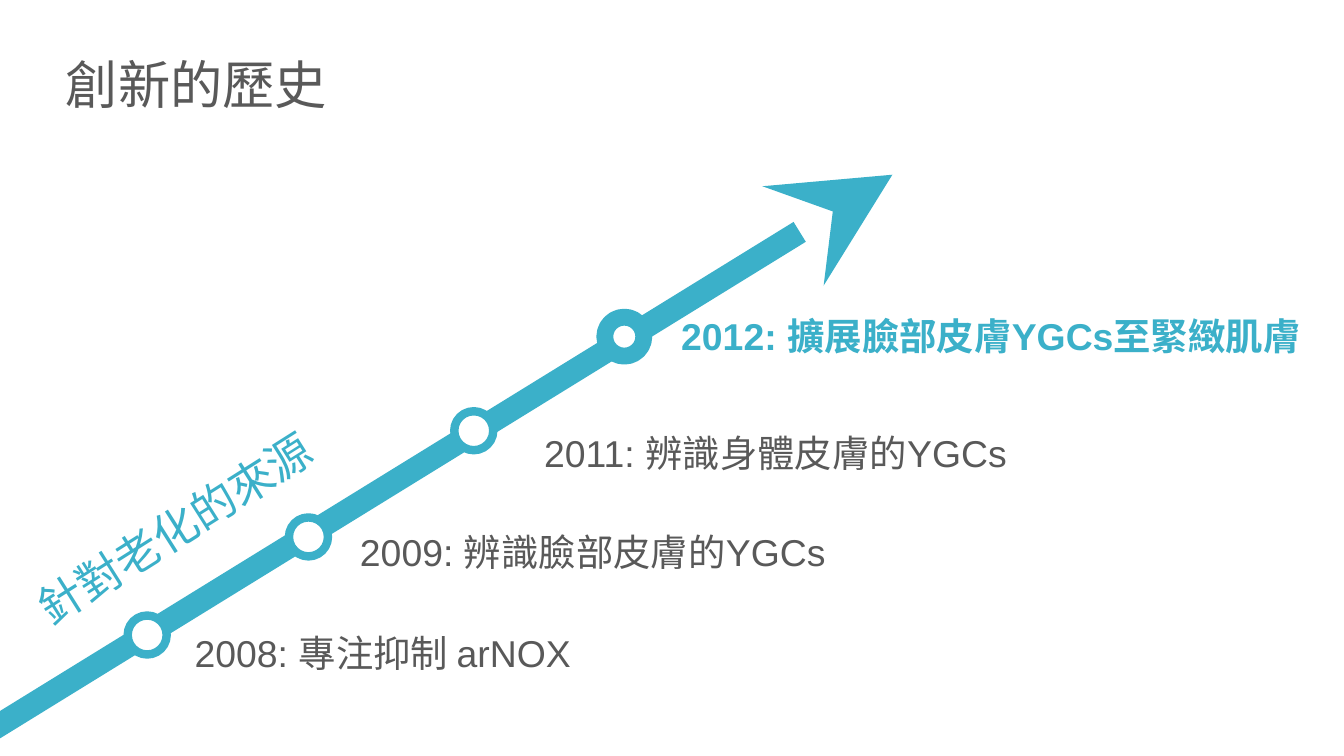
from lxml import etree
from pptx import Presentation
from pptx.dml.color import RGBColor
from pptx.enum.shapes import MSO_CONNECTOR, MSO_SHAPE
from pptx.enum.text import MSO_ANCHOR, MSO_AUTO_SIZE, PP_ALIGN
from pptx.oxml.ns import qn
from pptx.util import Inches, Pt

COLORS = {"teal": "3BB0C9", "gray": "595959", "white": "FFFFFF"}


def color(name):
    return RGBColor.from_string(COLORS[name])


def write(shape, text, size, name, bold=False, anchor=MSO_ANCHOR.TOP):
    tf = shape.text_frame
    frame = {"word_wrap": True, "auto_size": MSO_AUTO_SIZE.NONE,
             "vertical_anchor": anchor}
    for key, value in frame.items():
        setattr(tf, key, value)
    p = tf.paragraphs[0]
    p.alignment = PP_ALIGN.LEFT
    r = p.add_run()
    r.text = text
    for key, value in {"name": "Arial", "size": Pt(size), "bold": bold}.items():
        setattr(r.font, key, value)
    r.font.color.rgb = color(name)


# Widescreen 16:9 slide
prs = Presentation()
prs.slide_width, prs.slide_height = Inches(10), Inches(10 * 9 / 16)
s = prs.slides.add_slide(prs.slide_layouts[5])

# Title
title = s.shapes.title
box = {"left": 0.39, "top": 0.34, "width": 5.84, "height": 0.57}
for key, value in box.items():
    setattr(title, key, Inches(value))
write(title, "創新的歷史", 28, "gray", anchor=MSO_ANCHOR.MIDDLE)

# Rising arrow
arrow = s.shapes.add_connector(MSO_CONNECTOR.STRAIGHT, Inches(-0.11), Inches(5.46),
                               Inches(6.64), Inches(1.3))
arrow.line.color.rgb = color("teal")
arrow.line.width = Pt(12.5)
etree.SubElement(arrow.line._get_or_add_ln(), qn("a:tailEnd"),
                 type="stealth", w="lg", len="lg")
etree.SubElement(arrow._element.spPr, qn("a:effectLst"))

# Milestones: marker left, top, line width; label left, top, width, text, color, bold
milestones = [
    (0.95, 4.58, 4.5, 1.35, 4.64, 3.0, "2008: 專注抑制 arNOX", "gray", False),
    (2.15, 3.85, 4.5, 2.58, 3.89, 3.69, "2009: 辨識臉部皮膚的YGCs", "gray", False),
    (3.38, 3.06, 4.5, 3.95, 3.15, 3.67, "2011: 辨識身體皮膚的YGCs", "gray", False),
    (4.5, 2.36, 9, 4.97, 2.28, 4.82, "2012: 擴展臉部皮膚YGCs至緊緻肌膚", "teal", True),
]
for x, y, weight, left, top, width, text, name, bold in milestones:
    dot = s.shapes.add_shape(MSO_SHAPE.OVAL, Inches(x), Inches(y),
                             Inches(0.29), Inches(0.29))
    dot.shadow.inherit = False
    dot.fill.solid()
    dot.fill.fore_color.rgb = color("white")
    dot.line.color.rgb = color("teal")
    dot.line.width = Pt(weight)
    label = s.shapes.add_textbox(Inches(left), Inches(top), Inches(width), Inches(0.44))
    write(label, text, 20, name, bold)

# Caption along the arrow
caption = s.shapes.add_textbox(Inches(-0.48), Inches(1.84), Inches(7.99), Inches(0.97))
caption.rotation = 327.6
write(caption, "針對老化的來源", 24, "teal", anchor=MSO_ANCHOR.BOTTOM)
caption.text_frame.margin_bottom = Inches(0.12)

prs.save("out.pptx")
